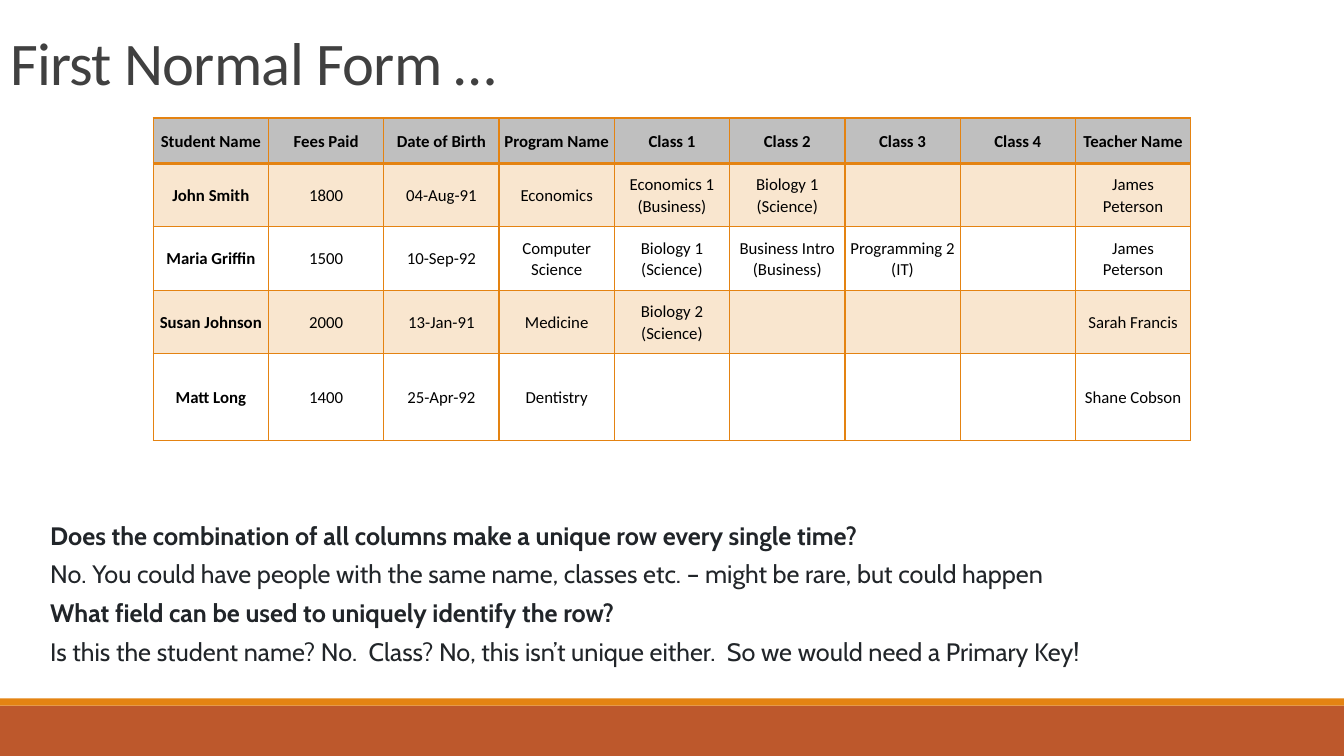
import pptx
import pptx.util
import pptx.dml.color
import pptx.enum.shapes
import pptx.enum.text
import pptx.oxml
import pptx.oxml.ns

Inches, Pt = pptx.util.Inches, pptx.util.Pt
RGBColor = pptx.dml.color.RGBColor
ALIGN, ANCHOR = pptx.enum.text.PP_ALIGN, pptx.enum.text.MSO_ANCHOR

ORANGE = RGBColor(0xE4, 0x83, 0x12)
RUST = RGBColor(0xBD, 0x58, 0x2C)
GREY = RGBColor(0xBF, 0xBF, 0xBF)
BLACK = RGBColor(0, 0, 0)
TITLE_COLOR = RGBColor(0x40, 0x40, 0x40)
NOTE_COLOR = RGBColor(0x21, 0x25, 0x29)

TITLE = "First Normal Form …"
STUDENTS = [
    ("Student Name", "Fees Paid", "Date of Birth", "Program Name",
     "Class 1", "Class 2", "Class 3", "Class 4", "Teacher Name"),
    ("John Smith", "1800", "04-Aug-91", "Economics",
     "Economics 1 (Business)", "Biology 1 (Science)", "", "", "James Peterson"),
    ("Maria Griffin", "1500", "10-Sep-92", "Computer Science",
     "Biology 1 (Science)", "Business Intro (Business)", "Programming 2 (IT)", "", "James Peterson"),
    ("Susan Johnson", "2000", "13-Jan-91", "Medicine",
     "Biology 2 (Science)", "", "", "", "Sarah Francis"),
    ("Matt Long", "1400", "25-Apr-92", "Dentistry", "", "", "", "", "Shane Cobson"),
]
QUESTIONS = [
    ("Does the combination of all columns make a unique row every single time?",
     "No. You could have people with the same name, classes etc. – might be rare, but could happen"),
    ("What field can be used to uniquely identify the row?",
     "Is this the student name? No.  Class? No, this isn’t unique either.  So we would need a Primary Key!"),
]

WIDTH, HEIGHT = 13.33, 7.5
BANDS = [(7, 0.5, RUST), (6.93, 0.07, ORANGE)]
TABLE_WIDTH, TABLE_TOP = 10.29, 1.17
ROW_HEIGHTS = [0.45, 0.63, 0.63, 0.63, 0.86]
BAND_OPACITY = 20


def apply(target, **values):
    for name, value in values.items():
        setattr(target, name, value)


def write(para, text, size, font, color, bold=False, **layout):
    span = para.add_run()
    span.text = text
    apply(span.font, size=Pt(size), name=font, bold=bold)
    span.font.color.rgb = color
    apply(para, **layout)
    return span


def add_borders(cell, bottom):
    """Draw the four edges; call before the cell is filled to keep the XML order."""
    for side, points in (("L", 1), ("R", 1), ("T", 1), ("B", bottom)):
        cell._tc.get_or_add_tcPr().append(pptx.oxml.parse_xml(
            f'<a:ln{side} {pptx.oxml.ns.nsdecls("a")} w="{Pt(points)}">'
            f'<a:solidFill><a:srgbClr val="{ORANGE}"/></a:solidFill></a:ln{side}>'))


def paint(cell, row):
    if row and row % 2 == 0:
        cell.fill.background()
        return
    cell.fill.solid()
    cell.fill.fore_color.rgb = ORANGE if row else GREY
    if row:
        color = cell._tc.tcPr.find("a:solidFill/a:srgbClr", pptx.oxml.ns._nsmap)
        color.append(pptx.oxml.parse_xml(
            f'<a:alpha {pptx.oxml.ns.nsdecls("a")} val="{BAND_OPACITY * 1000}"/>'))


def add_bands(page):
    for top, height, color in BANDS:
        band = page.shapes.add_shape(pptx.enum.shapes.MSO_SHAPE.RECTANGLE,
                                     0, Inches(top), Inches(WIDTH), Inches(height))
        band.shadow.inherit = False
        band.fill.solid()
        band.fill.fore_color.rgb = color
        band.line.fill.background()


def add_title(page):
    title = page.shapes.title
    apply(title, left=0, top=Inches(0.31), width=Inches(11.8), height=Inches(0.71))
    apply(title.text_frame, vertical_anchor=ANCHOR.BOTTOM, word_wrap=True,
          auto_size=pptx.enum.text.MSO_AUTO_SIZE.NONE)
    span = write(title.text_frame.paragraphs[0], TITLE, 43.2, "Calibri", TITLE_COLOR,
                 alignment=ALIGN.LEFT, line_spacing=0.85)
    span.font._element.set("spc", "-50")


def add_students(page):
    columns = len(STUDENTS[0])
    table = page.shapes.add_table(
        len(STUDENTS), columns, Inches((WIDTH - TABLE_WIDTH) / 2), Inches(TABLE_TOP),
        Inches(TABLE_WIDTH), Inches(sum(ROW_HEIGHTS))).table
    apply(table, first_row=False, horz_banding=False)
    for column in table.columns:
        column.width = Inches(TABLE_WIDTH / columns)
    margins = dict.fromkeys(
        ("margin_left", "margin_right", "margin_top", "margin_bottom"), Inches(0.05))
    for row, texts in enumerate(STUDENTS):
        table.rows[row].height = Inches(ROW_HEIGHTS[row])
        for column, text in enumerate(texts):
            cell = table.cell(row, column)
            apply(cell, vertical_anchor=ANCHOR.MIDDLE, **margins)
            add_borders(cell, bottom=1 if row else 2)
            paint(cell, row)
            if text:
                write(cell.text_frame.paragraphs[0], text, 12, "Calibri", BLACK,
                      bold=row == 0 or column == 0, alignment=ALIGN.CENTER,
                      line_spacing=1.07, space_after=Pt(18))


def add_questions(page):
    box = page.shapes.add_textbox(Inches(0.4), Inches(5.11), Inches(12.57), Inches(1.57))
    frame = box.text_frame
    apply(frame, word_wrap=True, auto_size=pptx.enum.text.MSO_AUTO_SIZE.SHAPE_TO_FIT_TEXT)
    lines = [(text, text == question) for question, answer in QUESTIONS
             for text in (question, answer)]
    for index, (text, bold) in enumerate(lines):
        para = frame.add_paragraph() if index else frame.paragraphs[0]
        write(para, text, 18, "Cabin", NOTE_COLOR, bold, space_after=Pt(6))


def main():
    deck = pptx.Presentation()
    apply(deck, slide_width=Inches(WIDTH), slide_height=Inches(HEIGHT))
    page = deck.slides.add_slide(deck.slide_layouts.get_by_name("Title Only"))
    add_bands(page)
    add_title(page)
    add_students(page)
    add_questions(page)
    deck.save("out.pptx")


if __name__ == "__main__":
    main()
